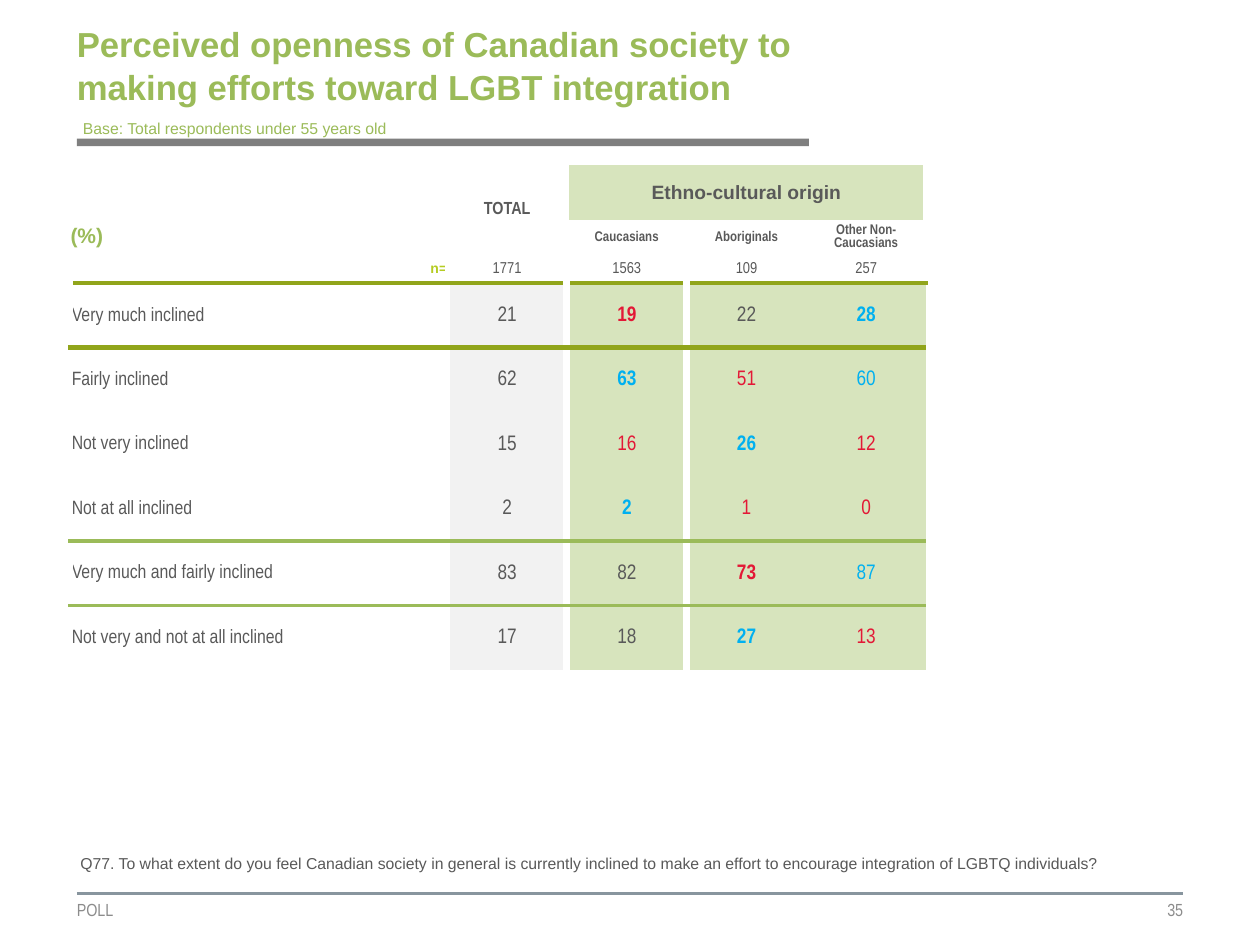
from lxml import etree
from pptx import Presentation
from pptx import util as u
from pptx.dml.color import RGBColor
from pptx.enum import shapes, text
from pptx.oxml.ns import qn

GREEN, OLIVE, LIME, PALE = "9BBB59", "91A51B", "B5CC22", "D7E4BD"
DARK, GREY, MIST, WHITE = "595959", "8C8C8C", "F2F2F2", "FFFFFF"
LOW, HIGH = "E31836", "00B0F0"
NARROW = "Arial Narrow"
NO_STYLE = "{2D5ABB26-0587-4C30-8999-92F81FD0307C}"
LEFT, CENTER, RIGHT = text.PP_ALIGN.LEFT, text.PP_ALIGN.CENTER, text.PP_ALIGN.RIGHT
MIDDLE, BOTTOM = text.MSO_ANCHOR.MIDDLE, text.MSO_ANCHOR.BOTTOM

# A letter after a value: low or high against the total, capital if significant
TONES = {"": (DARK, False), "l": (LOW, False), "L": (LOW, True),
         "h": (HIGH, False), "H": (HIGH, True)}
ANSWERS = [
    ("Very much inclined", "21", "19 L", "22", "28 H"),
    ("Fairly inclined", "62", "63 H", "51 l", "60 h"),
    ("Not very inclined", "15", "16 l", "26 H", "12 l"),
    ("Not at all inclined", "2", "2 H", "1 l", "0 l"),
    ("Very much and fairly inclined", "83", "82", "73 L", "87 h"),
    ("Not very and not at all inclined", "17", "18", "27 H", "13 l"),
]
GROUPS = ["Caucasians", "Aboriginals", "Other Non-Caucasians"]
BASES = ["1771", "1563", "109", "257"]
HEADER_ROWS = [2.4, 1.8, 2.6, 2.2]
BODY_ROW = 5.12
N_ROW = len(HEADER_ROWS) - 1
LAST_SINGLE = N_ROW + 4


def rgb(value):
    return RGBColor.from_string(value)


class Deck:
    """Places elements on a grid of 100 columns by 75 rows."""
    COLS, ROWS = 100, 75

    def __init__(self):
        self.prs = Presentation()
        self.prs.slide_width, self.prs.slide_height = u.Inches(10), u.Inches(7.5)
        self.slide = self.prs.slides.add_slide(self.prs.slide_layouts[5])

    def x(self, cols):
        return round(self.prs.slide_width * cols / self.COLS)

    def y(self, rows):
        return round(self.prs.slide_height * rows / self.ROWS)

    def box(self, left, top, width, height):
        return self.x(left), self.y(top), self.x(width), self.y(height)

    def set_text(self, tf, words, size, color, bold=False, font="Arial", align=LEFT, spacing=None):
        tf.text = words
        p = tf.paragraphs[0]
        p.alignment = align
        if spacing:
            p.line_spacing = spacing
        for r in p.runs:
            r.font.name, r.font.size, r.font.bold = font, u.Pt(size), bold
            r.font.color.rgb = rgb(color)

    def inset(self, tf, left=0, top=0, right=0, bottom=0):
        tf.margin_left, tf.margin_right = self.x(left), self.x(right)
        tf.margin_top, tf.margin_bottom = self.y(top), self.y(bottom)

    def title(self, box, words, size):
        sp = self.slide.shapes.title
        sp.left, sp.top, sp.width, sp.height = self.box(*box)
        tf = sp.text_frame
        tf.word_wrap, tf.auto_size = True, text.MSO_AUTO_SIZE.NONE
        tf.vertical_anchor = MIDDLE
        self.inset(tf, bottom=2.5)
        self.set_text(tf, words, size, GREEN, True, spacing=1.05)

    def label(self, box, words, size, color, wrap=True, flush=False, **style):
        tf = self.slide.shapes.add_textbox(*self.box(*box)).text_frame
        tf.word_wrap = wrap
        if flush:
            self.inset(tf)
            tf.vertical_anchor = MIDDLE
        self.set_text(tf, words, size, color, **style)

    def bar(self, box, color):
        sp = self.slide.shapes.add_shape(shapes.MSO_SHAPE.RECTANGLE, *self.box(*box))
        sp.shadow.inherit = False
        sp.fill.solid()
        sp.fill.fore_color.rgb = rgb(color)
        sp.line.fill.background()

    def rule(self, left, right, row, color, width):
        line = self.slide.shapes.add_connector(
            shapes.MSO_CONNECTOR.STRAIGHT, self.x(left), self.y(row), self.x(right), self.y(row))
        line.line.color.rgb, line.line.width = rgb(color), u.Pt(width)
        etree.SubElement(line._element.spPr, qn("a:effectLst"))

    def table(self, left, top, cols, rows):
        """Add an unstyled table whose empty cells cannot stretch their rows."""
        frame = self.slide.shapes.add_table(
            len(rows), len(cols), *self.box(left, top, sum(cols), sum(rows)))
        table = frame.table
        table.first_row = table.horz_banding = False
        table._tbl.tblPr.find(qn("a:tableStyleId")).text = NO_STYLE
        for col, width in zip(table.columns, cols):
            col.width = self.x(width)
        for row, height in zip(table.rows, rows):
            row.height = self.y(height)
        for cell in table.iter_cells():
            self.inset(cell, 0.1, 0.1, 0.1)
            cell.vertical_anchor = MIDDLE
            cell.text_frame.paragraphs[0]._p.get_or_add_endParaRPr().set("sz", "800")
        return table

    def borders(self, cell, **sides):
        tc_pr = cell._tc.get_or_add_tcPr()
        for side in "LRTB":
            if side in sides:
                color, width = sides[side]
                ln = etree.SubElement(tc_pr, qn("a:ln" + side), w=str(u.Pt(width)))
                fill = etree.SubElement(ln, qn("a:solidFill"))
                etree.SubElement(fill, qn("a:srgbClr"), val=color)

    def fill(self, cell, color):
        cell.fill.solid()
        cell.fill.fore_color.rgb = rgb(color)


def cell_borders(row, col):
    """Return the lines around one cell: white gutters and the two section rules."""
    thin, thick = (WHITE, 3), (WHITE, 4.5)
    if row > N_ROW:
        sides = [dict(L=thin, R=thin), dict(L=thin, R=thick), dict(L=thick), {}, {}][col]
    elif row == N_ROW or col < 2:
        sides = dict(R=thin) if col == 0 else dict(L=thin, R=thin)
    elif row < 2:
        sides = dict(L=thin, R=thick)
    else:
        sides = [dict(R=thin), dict(L=thin), {}][col - 2]
    for last, line in ((N_ROW, (OLIVE, 3)), (LAST_SINGLE, (GREEN, 2.25))):
        if row == last:
            sides["B"] = line
        elif row == last + 1:
            sides["T"] = line
    return sides


def add_results(deck):
    rows = HEADER_ROWS + [BODY_ROW] * len(ANSWERS)
    table = deck.table(5.6, 13.1, [29.9] + [9.5] * 4, rows)
    cell = table.cell
    for r in range(len(rows)):
        for c in range(5):
            deck.borders(cell(r, c), **cell_borders(r, c))
    for start, end in (((0, 1), (2, 1)), ((0, 2), (1, 4)), ((1, 0), (2, 0))):
        cell(*start).merge(cell(*end))

    def put(row, col, words, size, color=DARK, bold=False, font=NARROW, align=CENTER, **more):
        deck.set_text(cell(row, col).text_frame, words, size, color, bold, font, align, **more)

    put(0, 1, "TOTAL", 10, bold=True)
    put(0, 2, "Ethno-cultural origin", 11, bold=True, font="Arial")
    deck.fill(cell(0, 2), PALE)
    put(1, 0, "(%)", 12, GREEN, True, "Arial", LEFT, spacing=0.95)
    put(N_ROW, 0, "n=", 8, LIME, True, "Arial", RIGHT, spacing=0.95)
    for r in (1, N_ROW):
        deck.inset(cell(r, 0), top=0.5, bottom=0.5)
    cell(1, 0).vertical_anchor = BOTTOM
    for c, group in enumerate(GROUPS, 2):
        put(2, c, group, 8, bold=True)
    for c, base in enumerate(BASES, 1):
        put(N_ROW, c, base, 9)
    for r, (answer, *shares) in enumerate(ANSWERS, N_ROW + 1):
        put(r, 0, answer, 11, align=LEFT)
        for c, share in enumerate(shares, 1):
            value, _, tone = share.partition(" ")
            put(r, c, value, 12, *TONES[tone])
            deck.fill(cell(r, c), MIST if c == 1 else PALE)


def main():
    deck = Deck()
    deck.rule(6.1, 93.9, 70.9, "88959E", 1.5)
    deck.bar((6.1, 11, 58.1, 0.6), "7F7F7F")
    deck.label((6.1, 70.9, 28, 2.6), "POLL", 10, GREY, flush=True, font=NARROW)
    deck.label((65.5, 70.9, 28.4, 2.6), "35", 10, GREY, flush=True, font=NARROW, align=RIGHT)
    add_results(deck)
    deck.title((6.1, 2.9, 58.9, 6.9), "Perceived openness of Canadian society to "
               "making efforts toward LGBT integration", 19.8)
    deck.label((5.6, 8.9, 26.5, 2.5), "Base: Total respondents under 55 years old",
               9, GREEN, wrap=False)
    deck.label((5.4, 67.3, 90.2, 2.5), "Q77. To what extent do you feel Canadian society in "
               "general is currently inclined to make an effort to encourage integration of "
               "LGBTQ individuals?", 9, DARK)
    deck.prs.save("out.pptx")


if __name__ == "__main__":
    main()
